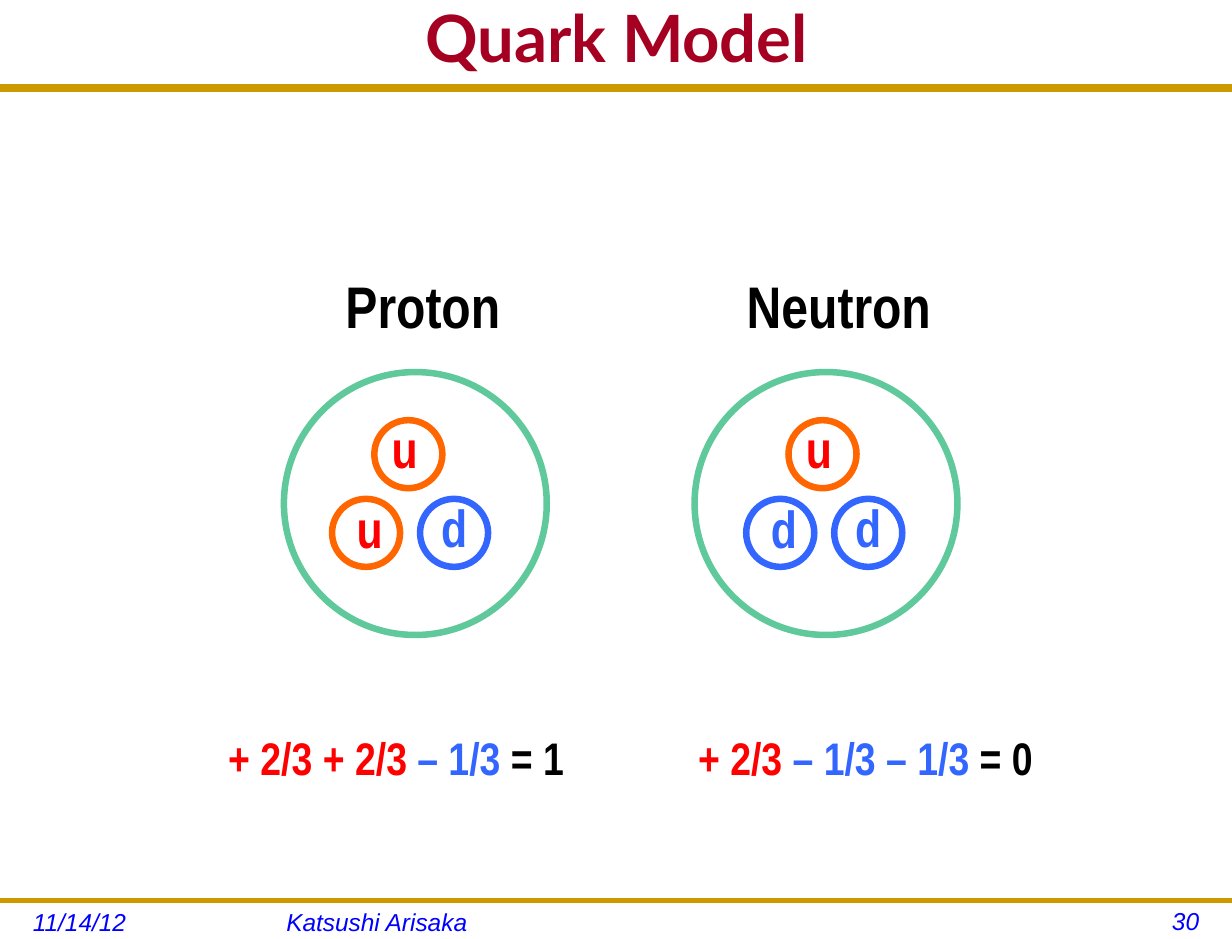
import pptx
import pptx.util
import pptx.dml.color
import pptx.enum.shapes
import pptx.enum.text
import pptx.oxml.ns
import lxml.etree

Inches, Pt = pptx.util.Inches, pptx.util.Pt
ALIGN = pptx.enum.text.PP_ALIGN
ANCHOR = pptx.enum.text.MSO_ANCHOR

COLORS = {"title": "A50021", "gold": "CC9900", "footer": "0000FF", "nucleon": "60C99C",
          "black": "000000", "up": "FF0000", "up ring": "FF6600", "down": "3366FF"}

# Content
TITLE = "Quark Model"
RULES = [(0.75, 4.5), (7.67, 3)]  # height on the slide, line width
FOOTERS = [("11/14/12", 0.17, 7.68, 2.08, ALIGN.LEFT),
           ("Katsushi Arisaka", 2.33, 7.68, 6.08, ALIGN.LEFT),
           ("30", 8.5, 7.67, 1.83, ALIGN.RIGHT)]
NUCLEONS = [
    {"name": "Proton", "name box": (2.69, 1.83), "ring left": 2.42, "quarks left": 2.83,
     "quarks": "uud", "sum left": 1.83,
     "sum": [("+ 2/3 + 2/3 ", "up"), ("– 1/3 ", "down"), ("= 1", "black")]},
    {"name": "Neutron", "name box": (6.08, 2.14), "ring left": 5.92, "quarks left": 6.36,
     "quarks": "udd", "sum left": 5.83,
     "sum": [("+ 2/3 ", "up"), ("– 1/3 – 1/3 ", "down"), ("= 0", "black")]},
]
QUARK_COLORS = {"u": ("up", "up ring"), "d": ("down", "down")}
# Ring offset from the left quark, ring top, letter offset from the ring
QUARK_PLACES = [(0.36, 3.58, 0.02, -0.08), (0, 4.25, 0.08, -0.07), (0.75, 4.25, 0.05, -0.08)]
RING_SIZE, QUARK_SIZE = 2.24, 0.58


def rgb(name):
    return pptx.dml.color.RGBColor.from_string(COLORS[name])


def style(span, font, size, color, bold=False, italic=False):
    span.font.name, span.font.size = font, Pt(size)
    span.font.bold, span.font.italic = bold, italic
    span.font.color.rgb = rgb(color)


def set_margins(frame):
    frame.margin_left = frame.margin_right = Inches(0.11)
    frame.margin_top = frame.margin_bottom = Inches(0.05)


def add_rule(slide, top, width):
    line = slide.shapes.add_connector(pptx.enum.shapes.MSO_CONNECTOR.STRAIGHT,
                                      0, Inches(top), Inches(10.5), Inches(top))
    line.line.color.rgb = rgb("gold")
    line.line.width = Pt(width)
    lxml.etree.SubElement(line.element.spPr, pptx.oxml.ns.qn("a:effectLst"))


def add_ring(slide, left, top, size, color):
    ring = slide.shapes.add_shape(pptx.enum.shapes.MSO_SHAPE.OVAL, Inches(left), Inches(top),
                                  Inches(size), Inches(size))
    ring.shadow.inherit = False
    ring.fill.background()
    ring.line.color.rgb = rgb(color)
    ring.line.width = Pt(4)


def add_label(slide, left, top, width, height, spans, size):
    box = slide.shapes.add_textbox(Inches(left), Inches(top), Inches(width), Inches(height))
    box.text_frame.word_wrap = False
    box.text_frame.auto_size = pptx.enum.text.MSO_AUTO_SIZE.SHAPE_TO_FIT_TEXT
    para = box.text_frame.paragraphs[0]
    para.alignment = ALIGN.CENTER
    for text, color in spans:
        span = para.add_run()
        span.text = text
        style(span, "Arial Narrow", size, color, bold=True)


deck = pptx.Presentation()
deck.slide_width, deck.slide_height = Inches(10.5), Inches(8)
slide = deck.slides.add_slide(deck.slide_layouts[5])

# Gold rules
for top, width in RULES:
    add_rule(slide, top, width)

# Title
title = slide.shapes.title
title.left, title.top, title.width, title.height = map(Inches, (0.17, 0, 10.17, 0.75))
title.text_frame.text = TITLE
title.text_frame.vertical_anchor = ANCHOR.MIDDLE
title.text_frame.auto_size = pptx.enum.text.MSO_AUTO_SIZE.NONE
set_margins(title.text_frame)
para = title.text_frame.paragraphs[0]
para.alignment, para.line_spacing = ALIGN.CENTER, 0.8
style(para.runs[0], "Lato", 40, "title", bold=True)

# Footer
for text, left, top, width, alignment in FOOTERS:
    box = slide.shapes.add_textbox(Inches(left), Inches(top), Inches(width), Inches(0.32))
    box.text_frame.word_wrap = True
    set_margins(box.text_frame)
    box.text_frame.text = text
    para = box.text_frame.paragraphs[0]
    para.alignment = alignment
    style(para.runs[0], "Arial", 15, "footer", italic=True)

# Nucleons with their quarks and charge sums
for nucleon in NUCLEONS:
    name_left, name_width = nucleon["name box"]
    add_label(slide, name_left, 2.25, name_width, 0.71, [(nucleon["name"], "black")], 36)
    add_ring(slide, nucleon["ring left"], 3.17, RING_SIZE, "nucleon")
    for quark, (offset, top, shift_x, shift_y) in zip(nucleon["quarks"], QUARK_PLACES):
        letter_color, ring_color = QUARK_COLORS[quark]
        left = nucleon["quarks left"] + offset
        add_ring(slide, left, top, QUARK_SIZE, ring_color)
        add_label(slide, left + shift_x, top + shift_y, 0.48, 0.64, [(quark, letter_color)], 32)
    add_label(slide, nucleon["sum left"], 6.17, 3.09, 0.57, nucleon["sum"], 28)

deck.save("out.pptx")
